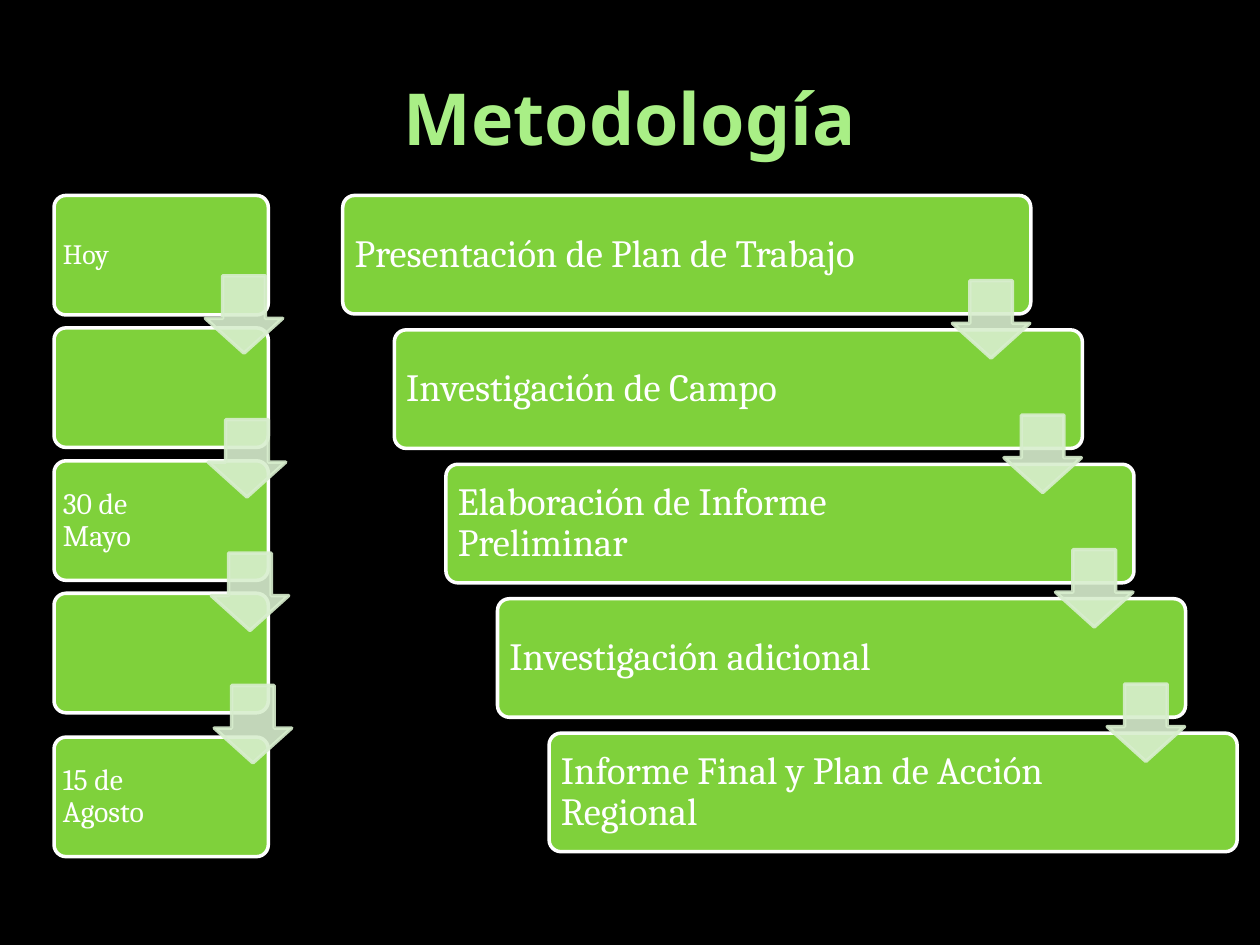
from pptx import Presentation
from pptx.dml.color import RGBColor
from pptx.enum.shapes import MSO_SHAPE
from pptx.enum.text import MSO_ANCHOR, PP_ALIGN
from pptx.oxml.ns import qn
from pptx.util import Cm, Pt
from lxml import etree

ROUNDED = MSO_SHAPE.ROUNDED_RECTANGLE
DOWN_ARROW = MSO_SHAPE.DOWN_ARROW
MIDDLE = MSO_ANCHOR.MIDDLE
LEFT, CENTER = PP_ALIGN.LEFT, PP_ALIGN.CENTER
TITLE_ONLY = 5

COLORS = {
    "background": "000000",
    "title": "A9EF86",
    "box": "7FD13B",
    "white": "FFFFFF",
    "arrow": "D8EECE",
}
STEPS = [
    "Presentación de Plan de Trabajo",
    "Investigación de Campo",
    "Elaboración de Informe Preliminar",
    "Investigación adicional",
    "Informe Final y Plan de Acción Regional",
]
# Text, font size and top of each date box
DATES = [
    ("Hoy", 16, 3.94),
    ("", 17, 6.61),
    ("30 de Mayo", 17, 9.29),
    ("", 17, 11.96),
    ("15 de Agosto", 17, 14.86),
]
DATE_ARROW_TOPS = [5.56, 8.46, 11.15, 13.82]
STEP_RIGHT, STEP_DOWN = 1.04, 2.71


def color(name):
    return RGBColor.from_string(COLORS[name])


def format_text(frame, text, font_format, alignment, line_spacing=None):
    paragraph = frame.paragraphs[0]
    paragraph.alignment = alignment
    paragraph.line_spacing = line_spacing
    run = paragraph.add_run()
    run.text = text
    for name, value in font_format.items():
        if name == "color":
            run.font.color.rgb = color(value)
        else:
            setattr(run.font, name, value)


def add_title(slide, text):
    title = slide.shapes.title
    place = {"left": Cm(1.27), "top": Cm(0.76), "width": Cm(22.86), "height": Cm(3.18)}
    for name, value in place.items():
        setattr(title, name, value)
    title.text_frame.vertical_anchor = MIDDLE
    font_format = {"size": Pt(41), "name": "Noto Sans", "bold": True, "color": "title"}
    format_text(title.text_frame, text, font_format, CENTER)


def add_filled_shape(slide, kind, place, adjustments, fill, line):
    shape = slide.shapes.add_shape(kind, *[Cm(length) for length in place])
    for index, value in enumerate(adjustments):
        shape.adjustments[index] = value
    shape.shadow.inherit = False
    shape.fill.solid()
    shape.fill.fore_color.rgb = color(fill)
    shape.line.color.rgb = color(line)
    shape.line.width = Pt(2)
    return shape


def add_box(slide, place, text, size, left_inset, right_inset):
    box = add_filled_shape(slide, ROUNDED, place, [0.1], "box", "white")
    if not text:
        return
    frame = box.text_frame
    frame_format = {
        "word_wrap": True,
        "vertical_anchor": MIDDLE,
        "margin_left": Cm(left_inset),
        "margin_right": Cm(right_inset),
    }
    for name, value in frame_format.items():
        setattr(frame, name, value)
    font_format = {"size": Pt(size), "name": "Cambria", "color": "white"}
    format_text(frame, text, font_format, LEFT, 0.9)


def add_arrow(slide, left, top):
    """Add a slightly transparent down arrow."""
    place = (left, top, 1.56, 1.56)
    arrow = add_filled_shape(slide, DOWN_ARROW, place, [0.45, 0.55], "arrow", "arrow")
    # The adjustments are head length, then shaft width
    arrow.adjustments[0], arrow.adjustments[1] = 0.55, 0.45
    for rgb in arrow.element.spPr.iter(qn("a:srgbClr")):
        etree.SubElement(rgb, qn("a:alpha"), val="90000")


def add_steps(slide):
    for index, text in enumerate(STEPS):
        place = (6.91 + index * STEP_RIGHT, 3.94 + index * STEP_DOWN, 13.87, 2.39)
        add_box(slide, place, text, 22, 0.17, 2.75)
    for index in range(len(STEPS) - 1):
        add_arrow(slide, 19.2 + index * STEP_RIGHT, 5.66 + index * STEP_DOWN)


def add_dates(slide):
    for text, size, top in DATES:
        add_box(slide, (1.09, top, 4.32, 2.41), text, size, 0.11, 2.02)
    for index, top in enumerate(DATE_ARROW_TOPS):
        add_arrow(slide, 4.14 + index * 0.06, top)


def main():
    presentation = Presentation()
    presentation.slide_width = Cm(25.4)
    presentation.slide_height = Cm(19.05)
    slide = presentation.slides.add_slide(presentation.slide_layouts[TITLE_ONLY])
    slide.background.fill.solid()
    slide.background.fill.fore_color.rgb = color("background")
    add_title(slide, "Metodología")
    add_steps(slide)
    add_dates(slide)
    presentation.save("out.pptx")


if __name__ == "__main__":
    main()
